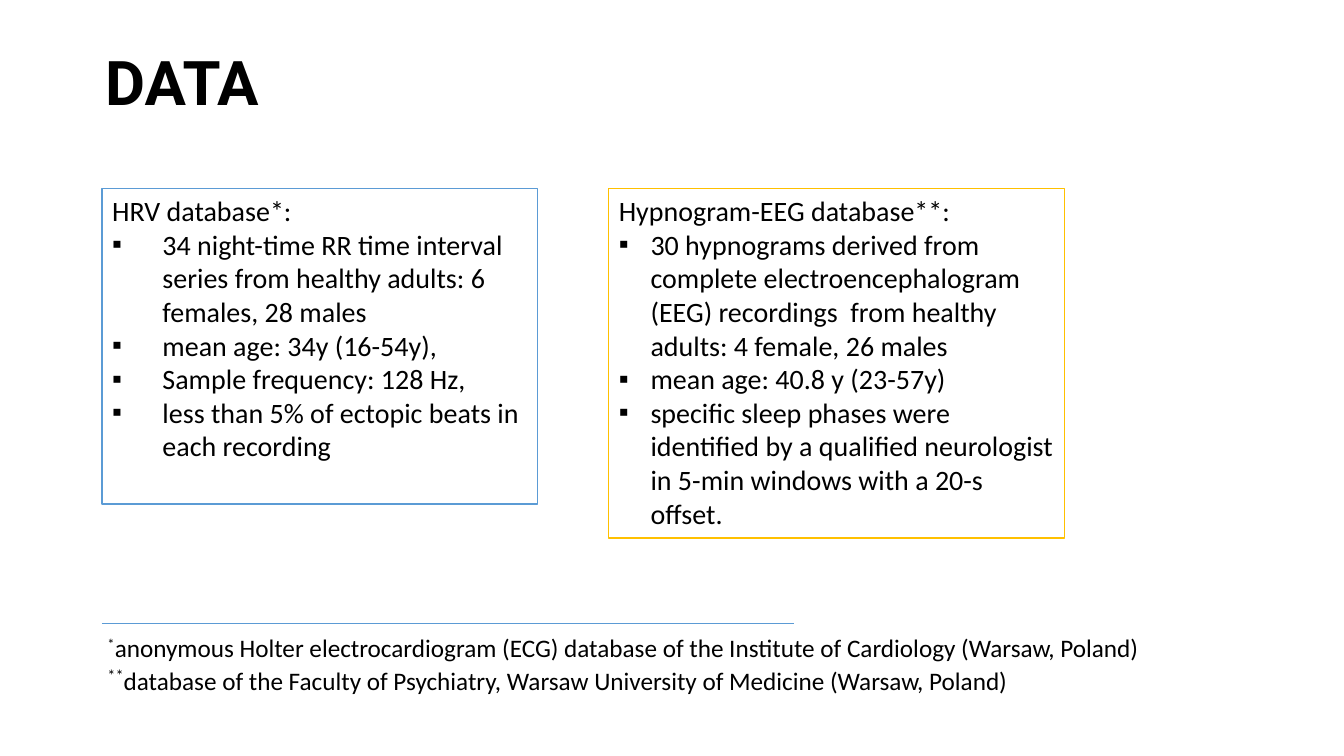
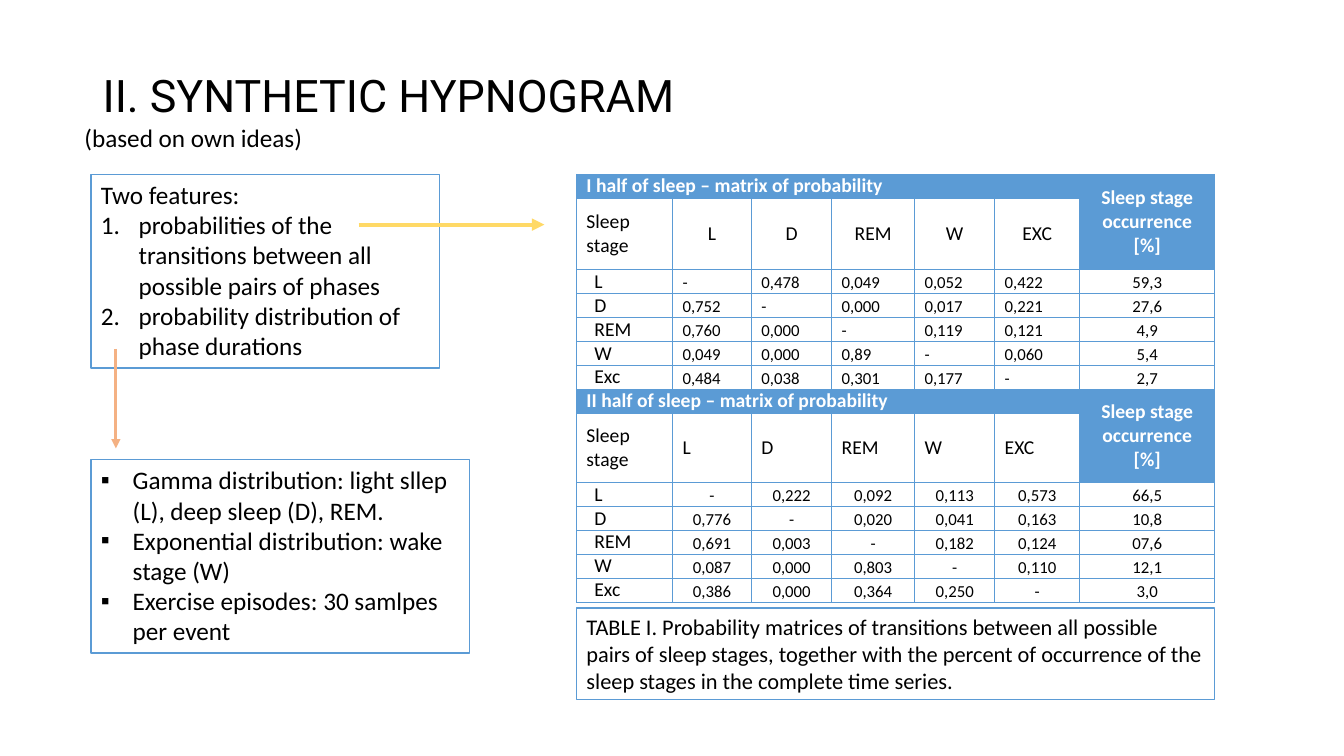
from lxml.etree import SubElement
from pptx import Presentation
from pptx.dml.color import RGBColor
from pptx.enum.shapes import MSO_CONNECTOR
from pptx.enum.text import MSO_ANCHOR, MSO_AUTO_SIZE, PP_ALIGN
from pptx.oxml.ns import qn
from pptx.util import Cm, Pt

BLACK = RGBColor(0x00, 0x00, 0x00)
WHITE = RGBColor(0xFF, 0xFF, 0xFF)
BLUE = RGBColor(0x5B, 0x9B, 0xD5)
GOLD = RGBColor(0xFF, 0xC0, 0x00)
YELLOW = RGBColor(0xFF, 0xD9, 0x66)
ORANGE = RGBColor(0xF4, 0xB1, 0x83)
TITLE_FONT, TEXT_FONT = "Roboto", "Calibri"
TWO_CONTENT = 3

# Each list line is (marker, text); boxes are left, top, width, height in cm.
HRV = [
    (None, "HRV database*:"),
    ("▪", "34 night-time RR time interval series from healthy adults: 6 females, 28 males"),
    ("▪", "mean age: 34y (16-54y),"),
    ("▪", "Sample frequency: 128 Hz,"),
    ("▪", "less than 5% of ectopic beats in each recording"),
]
EEG = [
    (None, "Hypnogram-EEG database**:"),
    ("▪", "30 hypnograms derived from complete electroencephalogram (EEG) recordings  "
          "from healthy adults: 4 female, 26 males"),
    ("▪", "mean age: 40.8 y (23-57y)"),
    ("▪", "specific sleep phases were identified by a qualified neurologist "
          "in 5-min windows with a 20-s offset."),
]
FOOTNOTES = [
    ("*", 18, "anonymous Holter electrocardiogram (ECG) database of the Institute of "
              "Cardiology (Warsaw, Poland)"),
    ("**", 20, "database of the Faculty of Psychiatry, Warsaw University of Medicine "
               "(Warsaw, Poland)"),
]
FEATURES = [
    (None, "Two features:"),
    ("1.", "probabilities of the transitions between all possible pairs of phases"),
    ("1.", "probability distribution of phase durations"),
]
DISTRIBUTIONS = [
    ("▪", "Gamma distribution: light sllep (L), deep sleep (D), REM."),
    ("▪", "Exponential distribution: wake stage (W)"),
    ("▪", "Exercise episodes: 30 samlpes per event"),
]
CAPTION = ("TABLE I. Probability matrices of transitions between all possible pairs of sleep "
           "stages, together with the percent of occurrence of the sleep stages in the "
           "complete time series.")

STAGES = ["Sleep stage", "L", "D", "REM", "W", "EXC"]
OCCURRENCE = "Sleep stage occurrence [%]"
# Title, alignment of stage names, alignment of probabilities, rows
MATRICES = [
    ("I half of sleep – matrix of probability", PP_ALIGN.CENTER, PP_ALIGN.LEFT, [
        ["L", "-", "0,478", "0,049", "0,052", "0,422", "59,3"],
        ["D", "0,752", "-", "0,000", "0,017", "0,221", "27,6"],
        ["REM", "0,760", "0,000", "-", "0,119", "0,121", "4,9"],
        ["W", "0,049", "0,000", "0,89", "-", "0,060", "5,4"],
        ["Exc", "0,484", "0,038", "0,301", "0,177", "-", "2,7"],
    ]),
    ("II half of sleep – matrix of probability", PP_ALIGN.LEFT, PP_ALIGN.CENTER, [
        ["L", "-", "0,222", "0,092", "0,113", "0,573", "66,5"],
        ["D", "0,776", "-", "0,020", "0,041", "0,163", "10,8"],
        ["REM", "0,691", "0,003", "-", "0,182", "0,124", "07,6"],
        ["W", "0,087", "0,000", "0,803", "-", "0,110", "12,1"],
        ["Exc", "0,386", "0,000", "0,364", "0,250", "-", "3,0"],
    ]),
]
COL_WIDTHS = [2.42, 1.99, 2.02, 2.09, 2.02, 2.14, 3.4]
ROW_HEIGHT, STAGE_ROW_HEIGHT = 0.6, 1.75
TABLE_LEFT, TABLE_TOP = 14.53, 4.39


def add_run(p, text, size, color=BLACK, bold=False, font=TEXT_FONT):
    r = p.add_run()
    r.text = text
    r.font.name, r.font.size, r.font.bold = font, Pt(size), bold
    r.font.color.rgb = color
    return r


def place(sp, box):
    sp.left, sp.top, sp.width, sp.height = (Cm(v) for v in box)


def outline(sp, color):
    sp.fill.solid()
    sp.fill.fore_color.rgb = WHITE
    sp.line.color.rgb = color
    sp.line.width = Pt(1)


def paragraphs(tf, items):
    """Yield one paragraph of the frame for each item."""
    for i, item in enumerate(items):
        yield (tf.add_paragraph() if i else tf.paragraphs[0]), item


def set_marker(p, marker, indent):
    pPr = p._p.get_or_add_pPr()
    hang = Cm(indent) if marker else 0
    pPr.set("marL", str(hang))
    pPr.set("indent", str(-hang))
    if marker is None:
        SubElement(pPr, qn("a:buNone"))
    elif marker == "1.":
        SubElement(pPr, qn("a:buFont"), typeface="+mj-lt")
        SubElement(pPr, qn("a:buAutoNum"), type="arabicPeriod")
    else:
        SubElement(pPr, qn("a:buFont"), typeface="Arial")
        SubElement(pPr, qn("a:buChar"), char=marker)


def fill_list(sp, box, lines, size, indent, color=BLUE):
    place(sp, box)
    outline(sp, color)
    tf = sp.text_frame
    tf.auto_size = MSO_AUTO_SIZE.NONE
    for p, (marker, text) in paragraphs(tf, lines):
        set_marker(p, marker, indent)
        p.space_before = Pt(0)
        add_run(p, text, size)


def add_slide(prs, title, box, size, bold=False):
    s = prs.slides.add_slide(prs.slide_layouts[TWO_CONTENT])
    place(s.shapes.title, box)
    tf = s.shapes.title.text_frame
    tf.auto_size = MSO_AUTO_SIZE.NONE
    tf.vertical_anchor = MSO_ANCHOR.BOTTOM
    p = tf.paragraphs[0]
    p.alignment, p.line_spacing = PP_ALIGN.CENTER, 0.9
    add_run(p, title, size, bold=bold, font=TITLE_FONT)
    return s


def add_textbox(s, box, wrap=True):
    sp = s.shapes.add_textbox(*(Cm(v) for v in box))
    sp.text_frame.word_wrap = wrap
    return sp


def add_line(s, start, end, color, width, arrow=False):
    line = s.shapes.add_connector(MSO_CONNECTOR.STRAIGHT, *(Cm(v) for v in start + end))
    line.line.color.rgb = color
    line.line.width = Pt(width)
    if arrow:
        SubElement(line.line._get_or_add_ln(), qn("a:tailEnd"), type="triangle")
    SubElement(line._element.spPr, qn("a:effectLst"))


def style_cell(cell, fill):
    cell.margin_left = cell.margin_right = Cm(0.25)
    cell.margin_top = cell.margin_bottom = 0
    cell.vertical_anchor = MSO_ANCHOR.MIDDLE
    tcPr = cell._tc.get_or_add_tcPr()
    for side in "LRTB":
        ln = SubElement(tcPr, qn(f"a:ln{side}"), w=str(Pt(0.5)))
        SubElement(SubElement(ln, qn("a:solidFill")), qn("a:srgbClr"), val=str(BLUE))
    cell.fill.solid()
    cell.fill.fore_color.rgb = fill


def write_cell(cell, text, align, size=14, color=BLACK, bold=False):
    p = cell.text_frame.paragraphs[0]
    p.alignment = align
    if size == 12:
        p.line_spacing = 1.15
    add_run(p, text, size, color, bold)


def add_matrix(table, top, title, stage_align, value_align, rows):
    last = len(COL_WIDTHS) - 1
    for i in range(len(rows) + 2):
        table.rows[top + i].height = Cm(STAGE_ROW_HEIGHT if i == 1 else ROW_HEIGHT)
        for j in range(last + 1):
            header = i == 0 or (i == 1 and j == last)
            style_cell(table.cell(top + i, j), BLUE if header else WHITE)
    table.cell(top, 0).merge(table.cell(top, last - 1))
    table.cell(top, last).merge(table.cell(top + 1, last))
    write_cell(table.cell(top, 0), title, PP_ALIGN.LEFT, color=WHITE, bold=True)
    write_cell(table.cell(top, last), OCCURRENCE, PP_ALIGN.CENTER, color=WHITE, bold=True)
    for j, stage in enumerate(STAGES):
        write_cell(table.cell(top + 1, j), stage, stage_align if j else PP_ALIGN.LEFT)
    for i, (stage, *values) in enumerate(rows, top + 2):
        name_cell = table.cell(i, 0)
        name_cell.margin_left = Cm(0.45)
        write_cell(name_cell, stage, PP_ALIGN.LEFT)
        for j, value in enumerate(values, 1):
            align = PP_ALIGN.CENTER if j == last else value_align
            write_cell(table.cell(i, j), value, align, size=12)


def add_probability_table(s):
    block = len(MATRICES[0][3]) + 2
    n_rows = block * len(MATRICES)
    height = len(MATRICES) * ((block - 1) * ROW_HEIGHT + STAGE_ROW_HEIGHT)
    table = s.shapes.add_table(n_rows, len(COL_WIDTHS), Cm(TABLE_LEFT), Cm(TABLE_TOP),
                               Cm(sum(COL_WIDTHS)), Cm(height)).table
    table.first_row = table.horz_banding = False
    for col, width in zip(table.columns, COL_WIDTHS):
        col.width = Cm(width)
    for k, matrix in enumerate(MATRICES):
        add_matrix(table, k * block, *matrix)


def data_slide(prs):
    s = add_slide(prs, "DATA", (1.7, 1.37, 5.77, 1.75), 44, bold=True)
    _, hrv, eeg = s.placeholders
    fill_list(hrv, (2.57, 4.75, 10.97, 7.95), HRV, 20, 1.27)
    fill_list(eeg, (15.34, 4.75, 11.48, 8.81), EEG, 20, 0.8, GOLD)
    notes = add_textbox(s, (2.46, 15.8, 27.3, 1.8))
    for p, (mark, mark_size, text) in paragraphs(notes.text_frame, FOOTNOTES):
        r = add_run(p, mark, mark_size)
        r.font._element.set("baseline", "30000")
        add_run(p, text, 18)
    add_line(s, (2.57, 15.72), (20.02, 15.72), BLUE, 0.5)


def hypnogram_slide(prs):
    s = add_slide(prs, "II. SYNTHETIC HYPNOGRAM", (1.19, 1.45, 17.22, 1.75), 32)
    _, features, distributions = s.placeholders
    fill_list(features, (2.29, TABLE_TOP, 8.79, 4.88), FEATURES, 18, 0.95)
    fill_list(distributions, (2.29, 11.58, 9.55, 4.88), DISTRIBUTIONS, 18, 0.8)
    add_probability_table(s)
    caption = add_textbox(s, (TABLE_LEFT, 15.32, sum(COL_WIDTHS), 2.31))
    outline(caption, BLUE)
    add_run(caption.text_frame.paragraphs[0], CAPTION, 16)
    add_line(s, (2.92, 8.79), (2.92, 11.3), ORANGE, 2.25, arrow=True)
    add_line(s, (9.04, 5.66), (13.72, 5.66), YELLOW, 3, arrow=True)
    subtitle = add_textbox(s, (1.88, 2.97, 6.07, 1.02), wrap=False)
    add_run(subtitle.text_frame.paragraphs[0], "(based on own ideas)", 18)


def main():
    prs = Presentation()
    prs.slide_width, prs.slide_height = Cm(33.87), Cm(19.05)
    data_slide(prs)
    hypnogram_slide(prs)
    prs.save("out.pptx")


if __name__ == "__main__":
    main()
